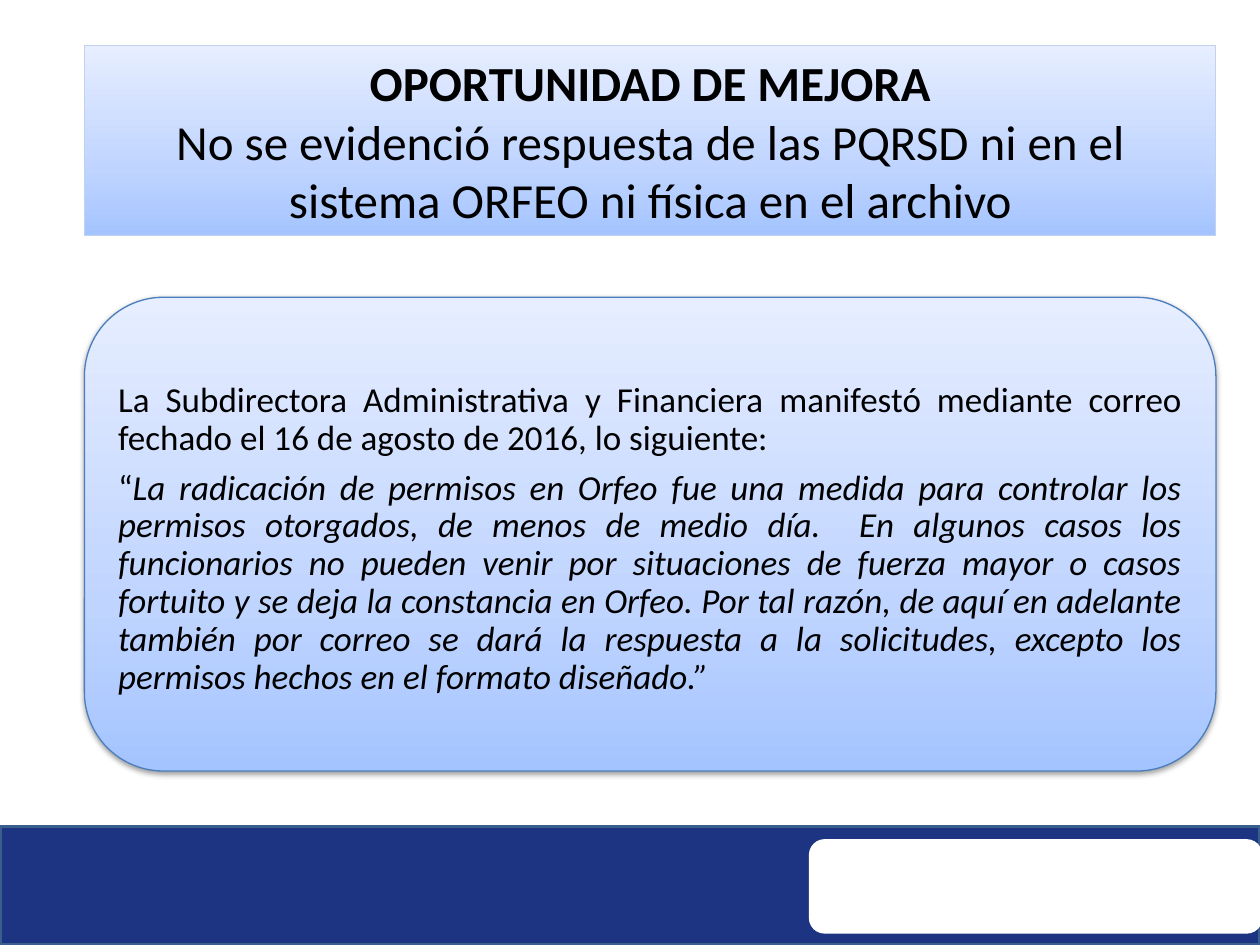
"""Build the improvement-opportunity slide with a title panel and a quotation panel."""
from copy import deepcopy

from lxml import etree
from pptx import Presentation
from pptx.dml.color import RGBColor
from pptx.enum.shapes import MSO_SHAPE as Shape
from pptx.enum.text import MSO_ANCHOR as Anchor, MSO_AUTO_SIZE as AutoSize, PP_ALIGN as Align
from pptx.oxml.ns import qn
from pptx.util import Pt

COLORS = {
    "navy": "1C3481", "navy_line": "3A5F8C", "white": "FFFFFF", "black": "000000",
    "title_line": "C2D1ED", "panel_line": "4B7EBC",
}
GRADIENT = [(0, "A4C4FF"), (0.35, "BFD4FF"), (1, "E6EEFF")]
LEFT, WIDTH = 48.24, 646.56


def style_panel(shape, line_color):
    shape.fill.gradient()
    shape.fill.gradient_angle = 90
    stop_list = shape._element.spPr.find(".//" + qn("a:gsLst"))
    stop_list.append(deepcopy(stop_list[-1]))
    for stop, (position, color) in zip(shape.fill.gradient_stops, GRADIENT):
        stop.position = position
        stop.color.rgb = RGBColor.from_string(color)
    shape.line.color.rgb = RGBColor.from_string(COLORS[line_color])
    shape.line.width = Pt(0.75)


def style_run(run, size, bold=False, italic=False):
    run.font.name = "Calibri"
    run.font.size = Pt(size)
    run.font.bold = bold
    run.font.italic = italic
    run.font.color.rgb = RGBColor.from_string(COLORS["black"])


presentation = Presentation()
presentation.slide_width, presentation.slide_height = Pt(720), Pt(540)
slide = presentation.slides.add_slide(presentation.slide_layouts[5])

footer = slide.shapes.add_shape(Shape.RECTANGLE, Pt(0), Pt(472.32), Pt(720), Pt(67.68))
footer.line.color.rgb = RGBColor.from_string(COLORS["navy_line"])
footer.line.width = Pt(2)
footer_label = slide.shapes.add_shape(
    Shape.ROUNDED_RECTANGLE, Pt(462.24), Pt(479.52), Pt(259.2), Pt(54))
footer_label.line.fill.background()
for shape, color in ((footer, "navy"), (footer_label, "white")):
    shape.shadow.inherit = False
    shape.fill.solid()
    shape.fill.fore_color.rgb = RGBColor.from_string(COLORS[color])

title = slide.shapes.title
title.left, title.top, title.width, title.height = Pt(LEFT), Pt(25.92), Pt(WIDTH), Pt(108.72)
style_panel(title, "title_line")
title.text_frame.text = (
    "OPORTUNIDAD DE MEJORA\n"
    "No se evidenció respuesta de las PQRSD ni en el sistema ORFEO ni física en el archivo")
title.text_frame.auto_size = AutoSize.NONE
title.text_frame.word_wrap = True
title.text_frame.vertical_anchor = Anchor.MIDDLE
for paragraph, bold in zip(title.text_frame.paragraphs, (True, False)):
    paragraph.alignment = Align.CENTER
    style_run(paragraph.runs[0], 28, bold=bold)

panel = slide.shapes.add_shape(
    Shape.ROUNDED_RECTANGLE, Pt(LEFT), Pt(169.92), Pt(WIDTH), Pt(270.72))
panel.shadow.inherit = False
style_panel(panel, "panel_line")
effects = panel._element.spPr.find(qn("a:effectLst"))
shadow = etree.SubElement(
    effects, qn("a:outerShdw"), blurRad=str(Pt(3.1)), dist=str(Pt(1.6)),
    dir="5400000", rotWithShape="0")
shadow_color = etree.SubElement(shadow, qn("a:srgbClr"), val=COLORS["black"])
etree.SubElement(shadow_color, qn("a:alpha"), val="38000")

text_frame = panel.text_frame
text_frame.word_wrap = True
text_frame.vertical_anchor = Anchor.MIDDLE
text_frame.margin_left = text_frame.margin_right = text_frame.margin_bottom = Pt(6)
text_frame.margin_top = Pt(12)
text_frame.text = (
    "La Subdirectora Administrativa y Financiera manifestó mediante correo fechado "
    "el 16 de agosto de 2016, lo siguiente:\n“")
introduction, quotation = text_frame.paragraphs
introduction.space_after = Pt(7)
quotation.add_run().text = (
    "La radicación de permisos en Orfeo fue una medida para controlar los permisos "
    "otorgados, de menos de medio día.  En algunos casos los funcionarios no pueden "
    "venir por situaciones de fuerza mayor o casos fortuito y se deja la constancia en "
    "Orfeo. Por tal razón, de aquí en adelante también por correo se dará la respuesta "
    "a la solicitudes, excepto los permisos hechos en el formato diseñado.”")
for paragraph in text_frame.paragraphs:
    paragraph.alignment = Align.JUSTIFY
    paragraph.line_spacing = 0.9
    for index, run in enumerate(paragraph.runs):
        style_run(run, 20, italic=index == 1)

presentation.save("out.pptx")
